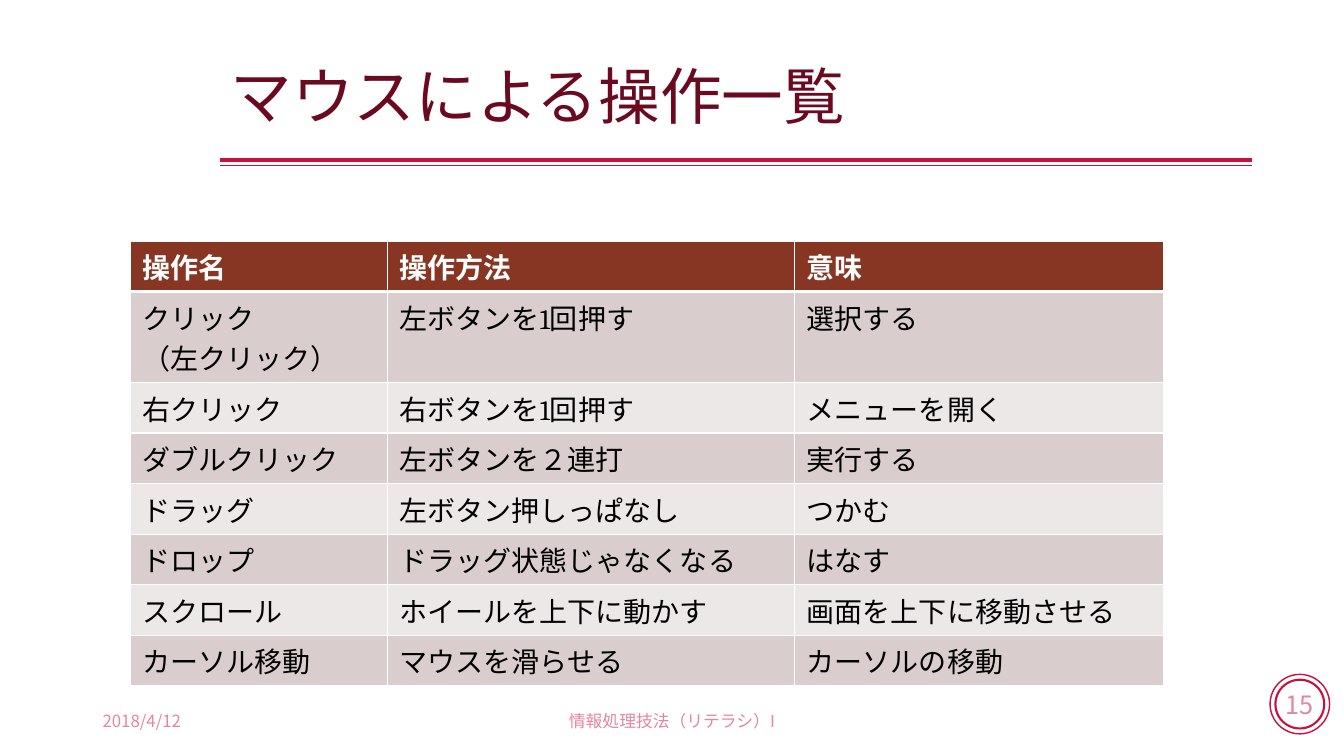
from lxml.etree import SubElement
from pptx import Presentation
from pptx.dml.color import RGBColor
from pptx.enum.shapes import MSO_CONNECTOR as Conn, MSO_SHAPE as Shape
from pptx.enum.text import MSO_ANCHOR as Anchor, PP_ALIGN as Align
from pptx.oxml.ns import qn
from pptx.util import Inches, Pt

COLORS = {
    "accent": "C8103D", "title": "6B0920", "header": "873624",
    "odd": "D9CECD", "even": "EDE8E8", "white": "FFFFFF", "black": "000000",
}
SANS, SERIF = "Noto Sans CJK JP", "Cambria"
WIDTH, HEIGHT = Inches(13.33), Inches(7.5)
COL, ROW = WIDTH / 100, HEIGHT / 100

OPERATIONS = [
    ("操作名", "操作方法", "意味"),
    ("クリック\n（左クリック）", "左ボタンを1回押す", "選択する"),
    ("右クリック", "右ボタンを1回押す", "メニューを開く"),
    ("ダブルクリック", "左ボタンを２連打", "実行する"),
    ("ドラッグ", "左ボタン押しっぱなし", "つかむ"),
    ("ドロップ", "ドラッグ状態じゃなくなる", "はなす"),
    ("スクロール", "ホイールを上下に動かす", "画面を上下に移動させる"),
    ("カーソル移動", "マウスを滑らせる", "カーソルの移動"),
]
COLUMN_WEIGHTS = (2.55, 4.04, 3.66)
ROW_WEIGHTS = [0.1 + 0.4 * len(texts[0].split("\n")) for texts in OPERATIONS]


def grid(x, y, w, h):
    return int(x * COL), int(y * ROW), int(w * COL), int(h * ROW)


def rgb(name):
    return RGBColor.from_string(COLORS[name])


def write(tf, text, size, color, font=SANS, bold=False, align=Align.LEFT, alpha=None):
    tf.text = text
    for p in tf.paragraphs:
        p.alignment = align
        for r in p.runs:
            r.font.size, r.font.bold, r.font.name = Pt(size), bold, font
            r.font.color.rgb = rgb(color)
            rpr = r.font._element
            SubElement(rpr, qn("a:ea")).set("typeface", SANS)
            if alpha:
                clr = rpr.find(".//" + qn("a:srgbClr"))
                SubElement(clr, qn("a:alpha")).set("val", str(alpha * 1000))


def add_label(s, box, text, size, color, **style):
    tf = s.shapes.add_textbox(*box).text_frame
    tf.word_wrap = True
    tf.vertical_anchor = Anchor.MIDDLE
    write(tf, text, size, color, **style)
    return tf


def add_ring(s, box, weight):
    ring = s.shapes.add_shape(Shape.OVAL, *box)
    ring.shadow.inherit = False
    ring.fill.background()
    ring.line.color.rgb = rgb("accent")
    ring.line.width = Pt(weight)
    return ring


def add_badge(s, box, number):
    x, y, w, h = box
    gap_x, gap_y = int(w * 0.09), int(h * 0.09)
    add_ring(s, box, 1)
    inner = add_ring(s, (x + gap_x, y + gap_y, w - 2 * gap_x, h - 2 * gap_y), 1.5)
    tf = inner.text_frame
    tf.word_wrap = False
    tf.vertical_anchor = Anchor.MIDDLE
    write(tf, number, 18, "accent", align=Align.CENTER, alpha=50)


def add_double_rule(s, box):
    x, y, w, h = box
    for line_y, weight in ((y, 3), (y + h, 1)):
        rule = s.shapes.add_connector(Conn.STRAIGHT, x, line_y, x + w, line_y)
        rule.line.color.rgb = rgb("accent")
        rule.line.width = Pt(weight)
        SubElement(rule._element.spPr, qn("a:effectLst"))


def add_title(s, box, text):
    tf = add_label(s, box, text, 44, "title")
    tf.paragraphs[0].line_spacing = 0.9


def add_footer(s, box, text, align):
    add_label(s, box, text, 12, "accent", align=align, alpha=50)


def add_borders(cell, top, bottom):
    tcpr = cell._tc.get_or_add_tcPr()
    for side, weight in (("L", 1), ("R", 1), ("T", top), ("B", bottom)):
        ln = SubElement(tcpr, qn("a:ln" + side), w=str(Pt(weight)))
        fill = SubElement(ln, qn("a:solidFill"))
        SubElement(fill, qn("a:srgbClr")).set("val", COLORS["white"])


def add_operations(s, box):
    x, y, w, h = box
    table = s.shapes.add_table(len(OPERATIONS), len(COLUMN_WEIGHTS), x, y, w, h).table
    for column, weight in zip(table.columns, COLUMN_WEIGHTS):
        column.width = int(w * weight / sum(COLUMN_WEIGHTS))
    for row, weight in zip(table.rows, ROW_WEIGHTS):
        row.height = int(h * weight / sum(ROW_WEIGHTS))
    for i, texts in enumerate(OPERATIONS):
        head = i == 0
        fill = "header" if head else "odd" if i % 2 else "even"
        for cell, text in zip(table.rows[i].cells, texts):
            cell.margin_left = cell.margin_right = Inches(0.12)
            cell.margin_top = cell.margin_bottom = Inches(0.05)
            add_borders(cell, 3 if i == 1 else 1, 3 if head else 1)
            cell.fill.solid()
            cell.fill.fore_color.rgb = rgb(fill)
            write(cell.text_frame, text, 20, "white" if head else "black", SERIF, head)


def main():
    prs = Presentation()
    prs.slide_width, prs.slide_height = WIDTH, HEIGHT
    s = prs.slides.add_slide(prs.slide_layouts[6])
    add_badge(s, grid(94.5, 89.2, 4.43, 7.87), "15")
    add_double_rule(s, grid(16.4, 21.12, 76.77, 0.75))
    add_title(s, grid(16.43, 5.33, 76.74, 15.6), "マウスによる操作一覧")
    add_footer(s, grid(6.9, 92.67, 22.5, 5.33), "2018/4/12", Align.LEFT)
    add_footer(s, grid(33.12, 92.67, 33.76, 5.33), "情報処理技法（リテラシ）I", Align.CENTER)
    add_operations(s, grid(9.7, 31.87, 76.89, 58.87))
    prs.save("out.pptx")


if __name__ == "__main__":
    main()
